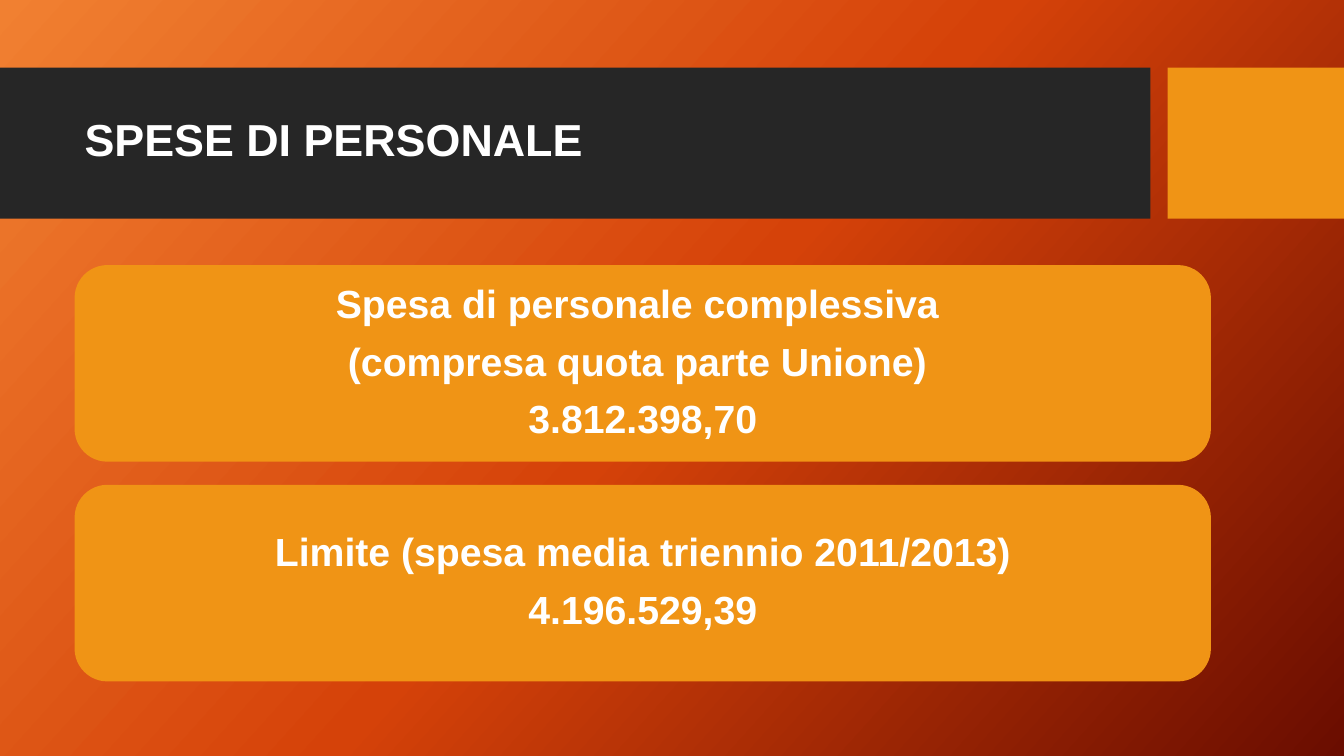
import copy

import pptx
import pptx.dml.color
import pptx.enum.shapes
import pptx.enum.text
import pptx.util

Inches = pptx.util.Inches
Pt = pptx.util.Pt
RGBColor = pptx.dml.color.RGBColor
MSO_SHAPE = pptx.enum.shapes.MSO_SHAPE
PP_ALIGN = pptx.enum.text.PP_ALIGN

COLORS = {
    "light_orange": "F18031",
    "red_orange": "D54209",
    "dark_red": "6A0D00",
    "band": "262626",
    "amber": "F09415",
    "white": "FFFFFF",
}


def add_panel(slide, kind, left, top, width, height, color):
    shape = slide.shapes.add_shape(
        kind, Inches(left), Inches(top), Inches(width), Inches(height)
    )
    shape.shadow.inherit = False
    shape.fill.solid()
    shape.fill.fore_color.rgb = RGBColor.from_string(COLORS[color])
    shape.line.fill.background()
    return shape


def write_lines(shape, lines, size, alignment):
    text_frame = shape.text_frame
    text_frame.word_wrap = True
    text_frame.vertical_anchor = pptx.enum.text.MSO_ANCHOR.MIDDLE
    text_frame.text = "\n".join(lines)
    for index, paragraph in enumerate(text_frame.paragraphs):
        paragraph.alignment = alignment
        paragraph.line_spacing = 0.9
        if index > 0:
            paragraph.space_before = Pt(11)
        for run in paragraph.runs:
            run.font.name = "Arial"
            run.font.size = Pt(size)
            run.font.bold = True
            run.font.color.rgb = RGBColor.from_string(COLORS["white"])


presentation = pptx.Presentation()
presentation.slide_width = Inches(13.33)
presentation.slide_height = Inches(7.5)
slide = presentation.slides.add_slide(presentation.slide_layouts[6])

background = slide.background.fill
background.gradient()
background.gradient_angle = 318
stop_list = background._fill._gradFill.gsLst
stop_list.append(copy.deepcopy(stop_list[-1]))
gradient_colors = ["light_orange", "red_orange", "dark_red"]
for index, (stop, color) in enumerate(zip(background.gradient_stops, gradient_colors)):
    stop.position = index / 2
    stop.color.rgb = RGBColor.from_string(COLORS[color])

add_panel(slide, MSO_SHAPE.RECTANGLE, 0, 0.67, 11.41, 1.5, "band")
add_panel(slide, MSO_SHAPE.RECTANGLE, 11.58, 0.67, 1.75, 1.5, "amber")

title = slide.shapes.add_textbox(Inches(0.74), Inches(0.82), Inches(10.51), Inches(1.18))
write_lines(title, ["SPESE DI PERSONALE"], 32, PP_ALIGN.LEFT)

cards = [
    [
        "Spesa di personale complessiva ",
        "(compresa quota parte Unione) ",
        "3.812.398,70",
    ],
    ["Limite (spesa media triennio 2011/2013)", "4.196.529,39"],
]
for index, lines in enumerate(cards):
    top = 2.63 + index * 2.18
    card = add_panel(slide, MSO_SHAPE.ROUNDED_RECTANGLE, 0.74, top, 11.27, 1.95, "amber")
    write_lines(card, lines, 28, PP_ALIGN.CENTER)

presentation.save("out.pptx")
